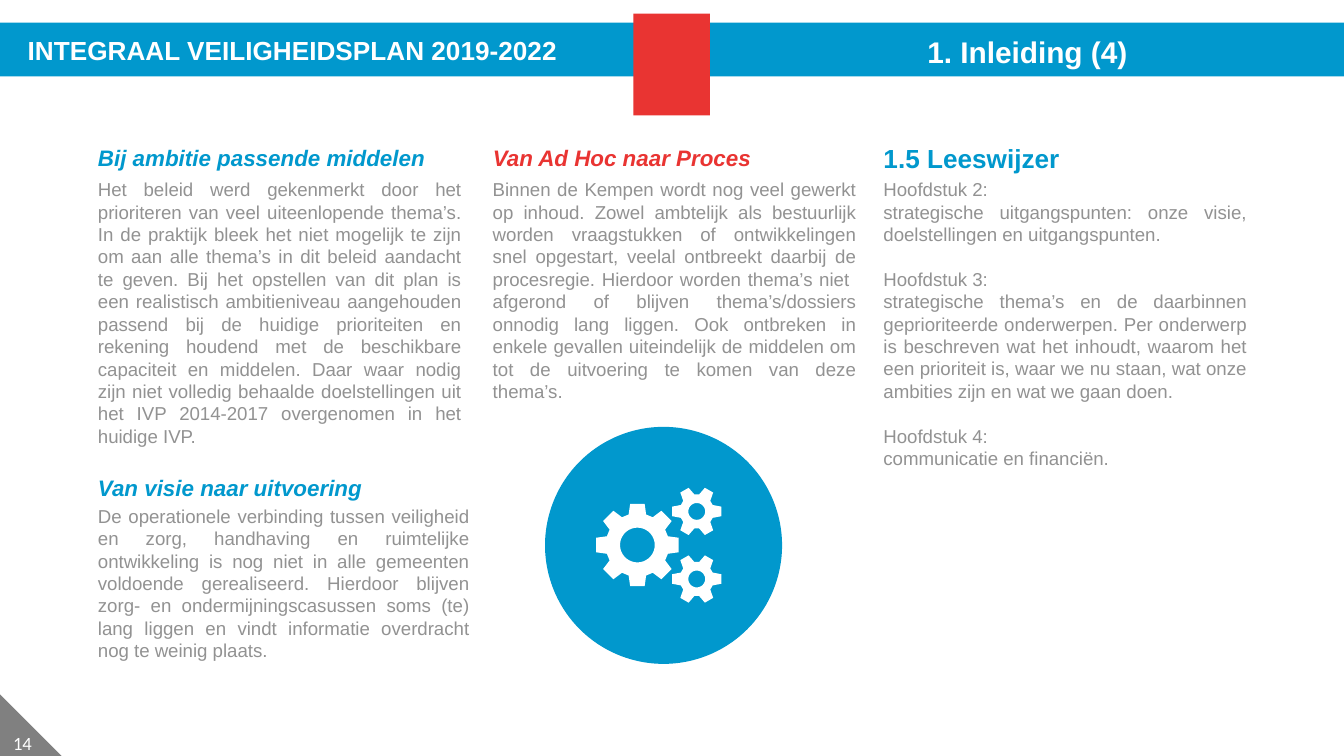
import math
import pptx
import pptx.util
import pptx.dml.color
import pptx.enum.shapes
import pptx.enum.text

Pt = pptx.util.Pt
KIND = pptx.enum.shapes.MSO_SHAPE
ALIGN = pptx.enum.text.PP_ALIGN
ANCHOR = pptx.enum.text.MSO_ANCHOR
HUES = {"blue": "0198CD", "red": "E93432", "gray": "929292",
        "dark": "808080", "white": "FFFFFF"}

# Left edge of each text column, and the usual width
COLS = (52.5, 264, 473.3)
WIDE = 194.4

MEANS = ("Het beleid werd gekenmerkt door het prioriteren van veel uiteenlopende thema’s. "
         "In de praktijk bleek het niet mogelijk te zijn om aan alle thema’s in dit beleid "
         "aandacht te geven. Bij het opstellen van dit plan is een realistisch ambitieniveau "
         "aangehouden passend bij de huidige prioriteiten en rekening houdend met de "
         "beschikbare capaciteit en middelen. Daar waar nodig zijn niet volledig behaalde "
         "doelstellingen uit het IVP 2014-2017 overgenomen in het huidige IVP.")
VISION = ("De operationele verbinding tussen veiligheid en zorg, handhaving en ruimtelijke "
          "ontwikkeling is nog niet in alle gemeenten voldoende gerealiseerd. Hierdoor blijven "
          "zorg- en ondermijningscasussen soms (te) lang liggen en vindt informatie overdracht "
          "nog te weinig plaats.")
ADHOC = ("Binnen de Kempen wordt nog veel gewerkt op inhoud. Zowel ambtelijk als bestuurlijk "
         "worden vraagstukken of ontwikkelingen snel opgestart, veelal ontbreekt daarbij de "
         "procesregie. Hierdoor worden thema’s niet  afgerond of blijven thema’s/dossiers "
         "onnodig lang liggen. Ook ontbreken in enkele gevallen uiteindelijk de middelen om "
         "tot de uitvoering te komen van deze thema’s.")
GUIDE = (
    ("Hoofdstuk 2:", "strategische uitgangspunten: onze visie, doelstellingen en "
     "uitgangspunten."),
    ("Hoofdstuk 3:", "strategische thema’s en de daarbinnen geprioriteerde onderwerpen. Per "
     "onderwerp is beschreven wat het inhoudt, waarom het een prioriteit is, waar we nu staan, "
     "wat onze ambities zijn en wat we gaan doen."),
    ("Hoofdstuk 4:", "communicatie en financiën."),
)


def tint(fill, hue):
    fill.solid()
    fill.fore_color.rgb = pptx.dml.color.RGBColor.from_string(HUES[hue])


def plain(shape, hue):
    tint(shape.fill, hue)
    shape.line.fill.background()
    shape.shadow.inherit = False


def block(slide, kind, box, hue):
    plain(slide.shapes.add_shape(kind, *map(Pt, box)), hue)


def write(slide, text, box, size=10, hue="gray", font="Arial", bold=False, slant=False,
          align=ALIGN.LEFT, anchor=ANCHOR.TOP, pad=(0, 0), wrap=True, gaps=(), shape=None):
    """Put text, one paragraph a line, in a new text box or in the given shape."""
    if shape is None:
        shape = slide.shapes.add_textbox(*map(Pt, box))
    else:
        shape.left, shape.top, shape.width, shape.height = map(Pt, box)
    frame = shape.text_frame
    frame.text = text
    frame.auto_size = pptx.enum.text.MSO_AUTO_SIZE.NONE
    frame.word_wrap = wrap
    frame.vertical_anchor = anchor
    frame.margin_left = frame.margin_right = Pt(pad[0])
    frame.margin_top = frame.margin_bottom = Pt(pad[1])
    for i, para in enumerate(frame.paragraphs):
        para.alignment = align
        para.space_before = Pt(12 if i in gaps else 0)
        for run in para.runs:
            run.font.size, run.font.name = Pt(size), font
            run.font.bold, run.font.italic = bold, slant
            tint(run.font.fill, hue)


def head(slide, text, left, top, **style):
    style = {"size": 12, "hue": "blue", "slant": True, **style}
    write(slide, text, (left, top, 212, 16), bold=True, anchor=ANCHOR.MIDDLE, **style)


def body(slide, text, left, top, high, wide=WIDE, gaps=()):
    write(slide, text, (left, top, wide, high), align=ALIGN.JUSTIFY, gaps=gaps)


def spot(mid, size, turn):
    """Point on a circle, in hundredths of a point."""
    angle = math.radians(turn)
    return (100 * (mid[0] + size * math.cos(angle)),
            100 * (mid[1] + size * math.sin(angle)))


def gear(mid, tip, root, teeth, narrow, broad, hole):
    """Outline of a toothed wheel, then that of its round hole."""
    rim = []
    for i in range(teeth):
        at = i * 360 / teeth
        rim += [spot(mid, root, at - broad), spot(mid, tip, at - narrow),
                spot(mid, tip, at + narrow), spot(mid, root, at + broad)]
    return rim, [spot(mid, hole, -turn) for turn in range(0, 360, 10)]


def gears(slide):
    loops = gear((341.5, 292), 22.4, 17, 8, 10, 16, 9.3)
    for y in (274, 310.2):
        loops += gear((373.3, y), 13.4, 9.2, 6, 11, 22, 4.5)
    pen = slide.shapes.build_freeform(*loops[0][0], scale=Pt(1) / 100)
    for i, loop in enumerate(loops):
        if i:
            pen.move_to(*loop[0])
        pen.add_line_segments(loop[1:], close=True)
    plain(pen.convert_to_shape(), "white")


def main():
    deck = pptx.Presentation()
    deck.slide_width, deck.slide_height = Pt(720), Pt(405)
    slide = deck.slides.add_slide(deck.slide_layouts[5])

    # Page corner
    block(slide, KIND.RIGHT_TRIANGLE, (0, 372, 33, 33), "dark")
    write(slide, "14", (0, 392, 24, 12), font="Calibri", hue="white",
          align=ALIGN.CENTER, anchor=ANCHOR.MIDDLE)

    # Top band with its red block, and the title above it
    block(slide, KIND.RECTANGLE, (0, 12.2, 720, 28.8), "blue")
    write(slide, "INTEGRAAL VEILIGHEIDSPLAN 2019-2022", (3.4, 15.1, 306.7, 24.2), size=14,
          hue="white", bold=True, align=ALIGN.CENTER, pad=(7.2, 3.6))
    block(slide, KIND.RECTANGLE, (339.4, 7.3, 41, 54.5), "red")
    title = slide.shapes.title
    title._element.getparent().append(title._element)
    write(slide, "1. Inleiding (4)", (405.4, 13.6, 290, 28), size=16, hue="white", bold=True,
          align=ALIGN.CENTER, anchor=ANCHOR.MIDDLE, wrap=False, shape=title)

    # Left column
    head(slide, "Bij ambitie passende middelen", COLS[0], 76.6)
    body(slide, MEANS, COLS[0], 95.3, 145)
    head(slide, "Van visie naar uitvoering", COLS[0], 253.5)
    body(slide, VISION, COLS[0], 270.3, 85, wide=198.7)

    # Middle column
    head(slide, "Van Ad Hoc naar Proces", COLS[1], 76.6, hue="red")
    body(slide, ADHOC, COLS[1], 95.3, 121)
    block(slide, KIND.OVAL, (292, 228.7, 127, 127), "blue")
    gears(slide)

    # Right column
    head(slide, "1.5 Leeswijzer", COLS[2], 76.6, size=14, slant=False)
    lines = "\n".join("\n".join(part) for part in GUIDE)
    body(slide, lines, COLS[2], 95.3, 170, gaps=(2, 4))

    deck.save("out.pptx")


if __name__ == "__main__":
    main()
